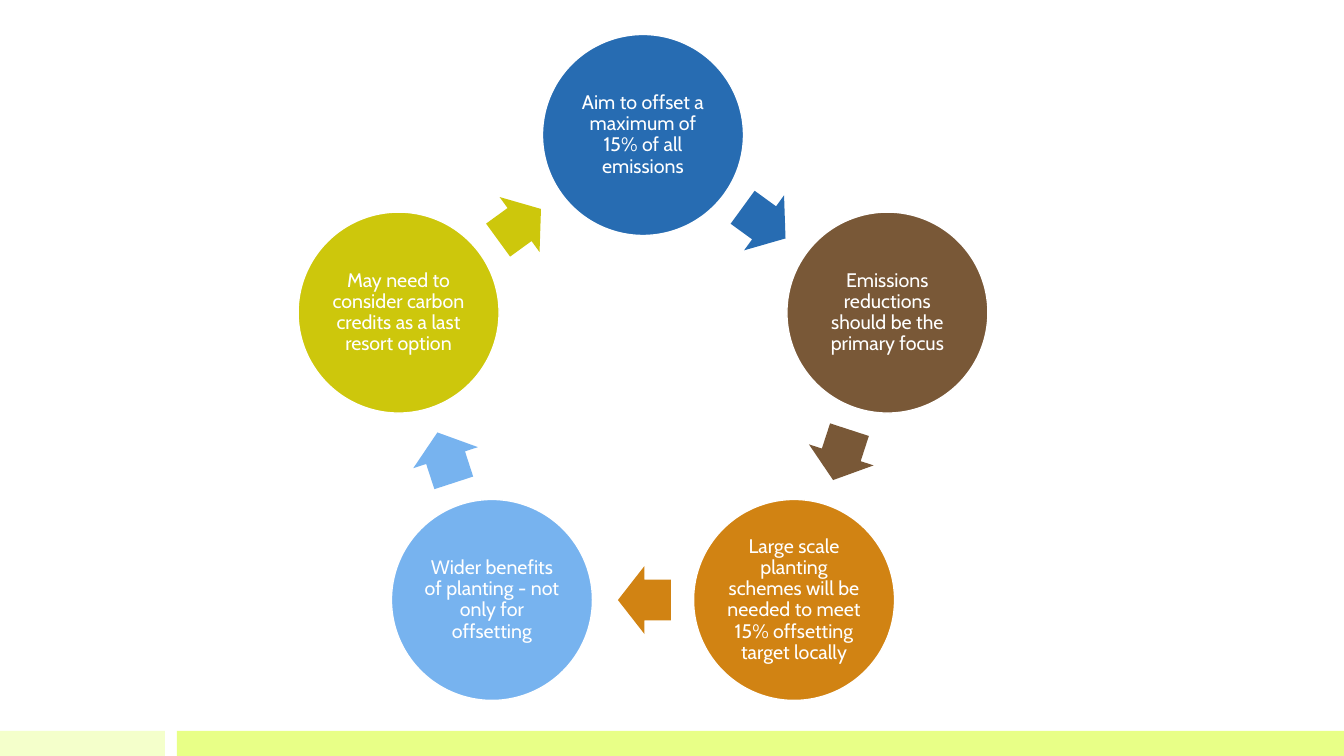
from math import cos, radians, sin

from pptx import Presentation
from pptx.dml.color import RGBColor
from pptx.enum.shapes import MSO_SHAPE
from pptx.enum.text import MSO_ANCHOR, PP_ALIGN
from pptx.util import Pt

RECT, OVAL, ARROW = MSO_SHAPE.RECTANGLE, MSO_SHAPE.OVAL, MSO_SHAPE.RIGHT_ARROW
MIDDLE, CENTER = MSO_ANCHOR.MIDDLE, PP_ALIGN.CENTER
PX = 914400 / 100.8

MID_X, MID_Y = 643, 392
RING, SIZE = 257, 201
ARROW_RING, ARROW_W, ARROW_H = 208, 53, 68
LAG = 0.4  # degrees by which each arrow sits before the midpoint of its gap

STEPS = [
    ("Aim to offset a maximum of 15% of all emissions", "276CB2"),
    ("Emissions reductions should be the primary focus", "795837"),
    ("Large scale planting schemes will be needed to meet 15% offsetting target locally", "D18313"),
    ("Wider benefits of planting - not only for offsetting", "77B3EF"),
    ("May need to consider carbon credits as a last resort option", "CDC70C"),
]


def add(kind, x, y, w, h, fill, text="", line=None, size=14, font="Cabin", color="FFFFFF"):
    """Add a filled shape, with centred text if any is given."""
    shape = slide.shapes.add_shape(kind, *(round(v * PX) for v in (x, y, w, h)))
    shape.shadow.inherit = False
    shape.fill.solid()
    shape.fill.fore_color.rgb = RGBColor.from_string(fill)
    if line:
        shape.line.color.rgb = RGBColor.from_string(line)
        shape.line.width = Pt(1)
    else:
        shape.line.fill.background()
    if text:
        frame = shape.text_frame
        frame.word_wrap = True
        frame.vertical_anchor = MIDDLE
        frame.margin_left = frame.margin_right = round(2 * PX)
        frame.margin_top = frame.margin_bottom = round(2 * PX)
        para = frame.paragraphs[0]
        para.alignment = CENTER
        para.line_spacing = 0.9
        run = para.add_run()
        run.text = text
        run.font.size = Pt(size)
        run.font.name = font
        run.font.color.rgb = RGBColor.from_string(color)
    return shape


def place(angle, ring, w, h):
    """Give the top left of a w by h box centred on a ring, clockwise from the top."""
    turn = radians(angle)
    return MID_X + ring * sin(turn) - w / 2, MID_Y - ring * cos(turn) - h / 2


prs = Presentation()
prs.slide_width, prs.slide_height = round(1344 * PX), round(756 * PX)
slide = prs.slides.add_slide(prs.slide_layouts[6])

add(RECT, 0, 731, 165, 25, "F4FFCB")
add(RECT, 177, 731, 1167, 25, "E8FF87")

for i, (text, fill) in enumerate(STEPS):
    angle = i * 360 / len(STEPS)
    x, y = place(angle, RING, SIZE, SIZE)
    add(OVAL, x, y, SIZE, SIZE, fill, text, line="FFFFFF")

    turn = angle + 180 / len(STEPS)
    x, y = place(turn - LAG, ARROW_RING, ARROW_W, ARROW_H)
    arrow = add(ARROW, x, y, ARROW_W, ARROW_H, fill)
    arrow.adjustments[0] = 0.6
    arrow.adjustments[1] = 0.5
    arrow.rotation = turn

prs.save("out.pptx")
